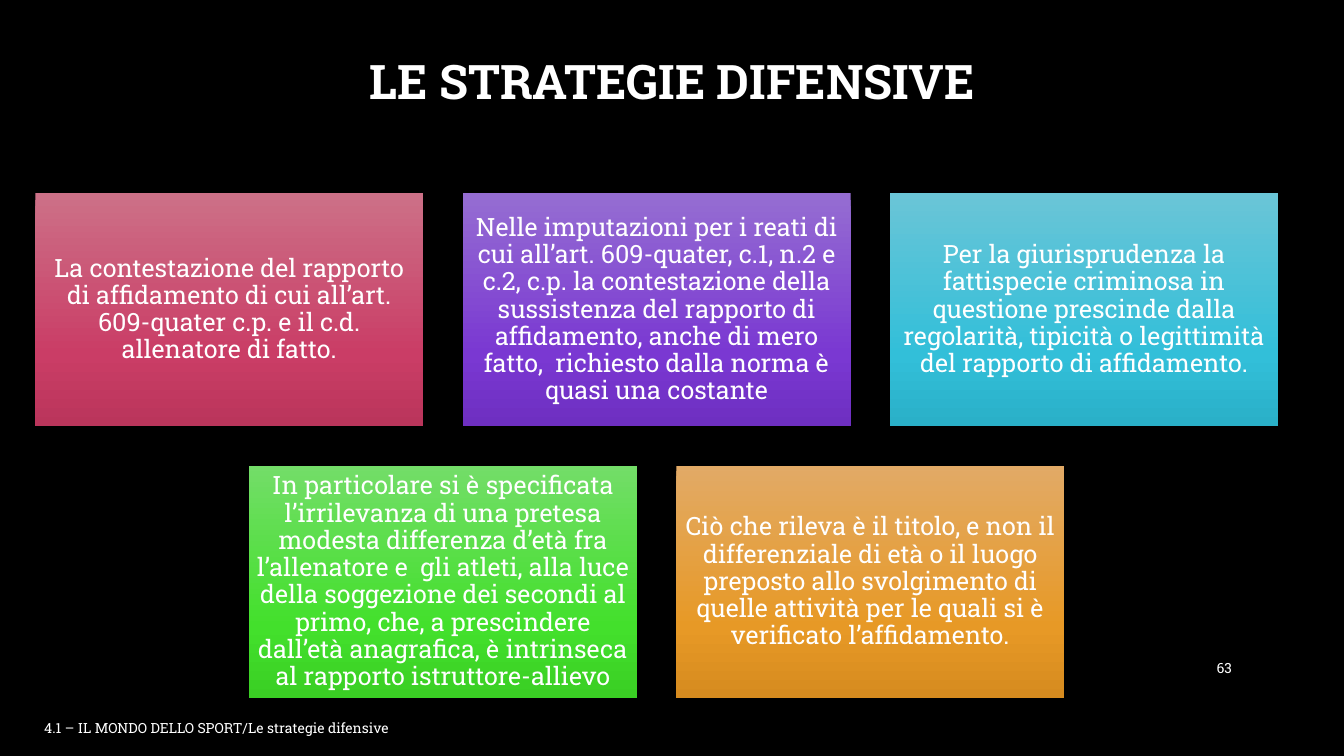
import copy

import pptx
import pptx.dml.color
import pptx.enum.shapes
import pptx.enum.text
import pptx.oxml.ns
import pptx.util

Pt = pptx.util.Pt
RGBColor = pptx.dml.color.RGBColor
ALIGN = pptx.enum.text.PP_ALIGN
ANCHOR = pptx.enum.text.MSO_ANCHOR

FONT = "Roboto Slab"
BLACK = RGBColor(0x00, 0x00, 0x00)
WHITE = RGBColor(0xFF, 0xFF, 0xFF)
PINK = (RGBColor(0xCC, 0x70, 0x87), RGBColor(0xCA, 0x3D, 0x66), RGBColor(0xBA, 0x35, 0x5B))
PURPLE = (RGBColor(0x95, 0x6D, 0xD2), RGBColor(0x7A, 0x38, 0xD2), RGBColor(0x6E, 0x2F, 0xC1))
CYAN = (RGBColor(0x6A, 0xC5, 0xD7), RGBColor(0x32, 0xBF, 0xD9), RGBColor(0x2A, 0xB0, 0xC8))
GREEN = (RGBColor(0x73, 0xDD, 0x68), RGBColor(0x43, 0xE0, 0x2C), RGBColor(0x3A, 0xCF, 0x24))
ORANGE = (RGBColor(0xE2, 0xAA, 0x66), RGBColor(0xE7, 0x99, 0x26), RGBColor(0xD6, 0x8B, 0x1F))
GRADIENT_POSITIONS = (0, 0.69, 1)

CARD_WIDTH, CARD_HEIGHT, CARD_GAP = 277.2, 166.3, 28.1
CARDS_CENTER, CARDS_TOP = 469.1, 138.2
CARD_INSET = 5

CARD_ROWS = (
    (
        ("La contestazione del rapporto di affidamento di cui all’art. 609-quater c.p. "
         "e il c.d. allenatore di fatto.", PINK),
        ("Nelle imputazioni per i reati di cui all’art. 609-quater, c.1, n.2 e c.2, c.p. "
         "la contestazione della sussistenza del rapporto di affidamento, anche di mero "
         "fatto,  richiesto dalla norma è quasi una costante", PURPLE),
        ("Per la giurisprudenza la fattispecie criminosa in questione prescinde dalla "
         "regolarità, tipicità o legittimità del rapporto di affidamento.", CYAN),
    ),
    (
        ("In particolare si è specificata l’irrilevanza di una pretesa modesta differenza "
         "d’età fra l’allenatore e  gli atleti, alla luce della soggezione dei secondi al "
         "primo, che, a prescindere dall’età anagrafica, è intrinseca al rapporto "
         "istruttore-allievo", GREEN),
        ("Ciò che rileva è il titolo, e non il differenziale di età o il luogo preposto "
         "allo svolgimento di quelle attività per le quali si è verificato l’affidamento.",
         ORANGE),
    ),
)


def write_text(shape, text, size, align, anchor=ANCHOR.MIDDLE, bold=False, line_spacing=None):
    frame = shape.text_frame
    frame.text = text
    frame.word_wrap = True
    frame.vertical_anchor = anchor
    paragraph = frame.paragraphs[0]
    paragraph.alignment = align
    paragraph.line_spacing = line_spacing
    font = paragraph.runs[0].font
    font.name = FONT
    font.size = Pt(size)
    font.bold = bold
    font.color.rgb = WHITE


def fill_gradient(shape, colors):
    fill = shape.fill
    fill.gradient()
    fill.gradient_angle = 270
    stop_list = shape._element.spPr.find(".//" + pptx.oxml.ns.qn("a:gsLst"))
    stop_list.append(copy.deepcopy(stop_list[-1]))
    for stop, position, color in zip(fill.gradient_stops, GRADIENT_POSITIONS, colors):
        stop.position = position
        stop.color.rgb = color


def add_title(slide, text):
    title = slide.shapes.title
    title.left, title.top, title.width, title.height = Pt(72.7), Pt(7.9), Pt(815), Pt(104.4)
    write_text(title, text, 34, ALIGN.CENTER, bold=True, line_spacing=0.9)


def add_label(slide, text, left, top, width, height, align, anchor):
    label = slide.shapes.add_textbox(Pt(left), Pt(top), Pt(width), Pt(height))
    write_text(label, text, 10, align, anchor)


def add_card(slide, text, colors, left, top):
    card = slide.shapes.add_shape(
        pptx.enum.shapes.MSO_SHAPE.RECTANGLE,
        Pt(left), Pt(top), Pt(CARD_WIDTH), Pt(CARD_HEIGHT))
    card.shadow.inherit = False
    card.line.fill.background()
    fill_gradient(card, colors)
    write_text(card, text, 18, ALIGN.CENTER, line_spacing=0.9)
    frame = card.text_frame
    frame.margin_left = frame.margin_right = Pt(CARD_INSET)
    frame.margin_top = frame.margin_bottom = Pt(CARD_INSET)


def add_card_row(slide, cards, top):
    step = CARD_WIDTH + CARD_GAP
    left = CARDS_CENTER - (len(cards) * step - CARD_GAP) / 2
    for column, (text, colors) in enumerate(cards):
        add_card(slide, text, colors, left + column * step, top)


def main():
    presentation = pptx.Presentation()
    presentation.slide_width, presentation.slide_height = Pt(960), Pt(540)
    slide = presentation.slides.add_slide(presentation.slide_layouts.get_by_name("Title Only"))
    slide.background.fill.solid()
    slide.background.fill.fore_color.rgb = BLACK

    add_title(slide, "LE STRATEGIE DIFENSIVE")
    add_label(slide, "4.1 – IL MONDO DELLO SPORT/Le strategie difensive",
              24.5, 510.5, 480, 19.4, ALIGN.LEFT, ANCHOR.TOP)
    add_label(slide, "63", 828, 463, 59, 28.8, ALIGN.RIGHT, ANCHOR.MIDDLE)
    for row, cards in enumerate(CARD_ROWS):
        add_card_row(slide, cards, CARDS_TOP + row * (CARD_HEIGHT + CARD_GAP))

    presentation.save("out.pptx")


if __name__ == "__main__":
    main()
